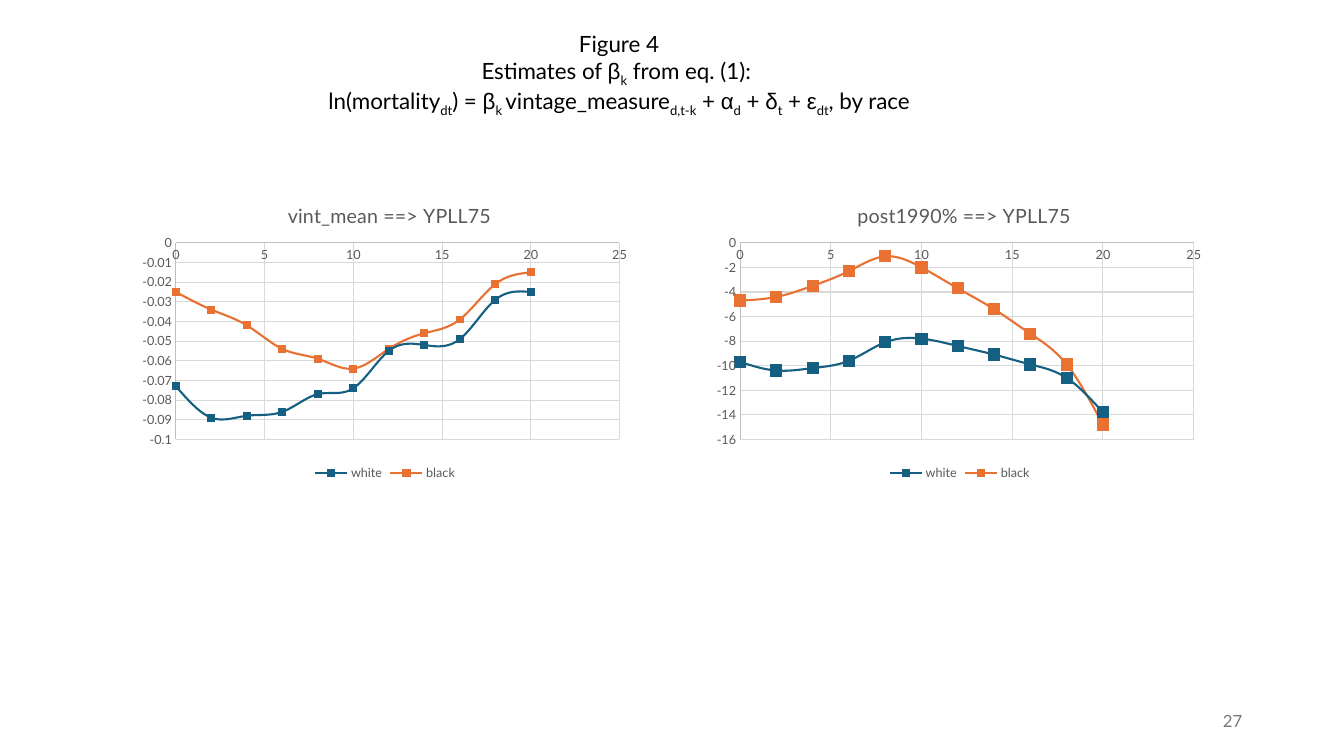
from itertools import groupby

from lxml import etree
from pptx import Presentation
from pptx.chart.data import XyChartData
from pptx.dml.color import RGBColor
from pptx.enum.chart import (XL_CHART_TYPE, XL_LEGEND_POSITION, XL_MARKER_STYLE,
                             XL_TICK_MARK)
from pptx.enum.text import MSO_ANCHOR, PP_ALIGN
from pptx.oxml.ns import qn
from pptx.util import Pt

PX = 9144  # 100 px to the inch
SCATTER = XL_CHART_TYPE.XY_SCATTER_SMOOTH
SQUARE = XL_MARKER_STYLE.SQUARE
NO_TICK = XL_TICK_MARK.NONE
LEGEND_BOTTOM = XL_LEGEND_POSITION.BOTTOM
CENTER, RIGHT = PP_ALIGN.CENTER, PP_ALIGN.RIGHT
MIDDLE, BOTTOM = MSO_ANCHOR.MIDDLE, MSO_ANCHOR.BOTTOM

GREEK = "αβδε"
YEARS = range(0, 21, 2)
SERIES_COLORS = {"white": "156082", "black": "E97132"}

# Every second piece between bars is a subscript.
HEADING = [
    ["Figure 4"],
    ["Estimates of β|k| from eq. (1): ",
     "ln(mortality|dt|) = β|k |vintage_measure|d,t-k| + α|d| + δ|t| + ε|dt|, by race"],
]

CHARTS = [
    {"title": "vint_mean ==> YPLL75", "left": 132, "marker": 5,
     "title_at": {"x": 0.3, "y": 0.05},
     "plot_at": {"x": 0.085, "y": 0.2, "w": 0.88, "h": 0.65},
     "low": -0.1, "step": 0.01,
     "values": {
         "white": [-0.073, -0.089, -0.088, -0.086, -0.077, -0.074,
                   -0.055, -0.052, -0.049, -0.029, -0.025],
         "black": [-0.025, -0.034, -0.042, -0.054, -0.059, -0.064,
                   -0.054, -0.046, -0.039, -0.021, -0.015]}},
    {"title": "post1990% ==> YPLL75", "left": 702, "marker": 8,
     "title_at": {"x": 0.29, "y": 0.05},
     "plot_at": {"x": 0.064, "y": 0.2, "w": 0.9, "h": 0.65},
     "low": -16, "step": 2,
     "values": {
         "white": [-9.7, -10.4, -10.2, -9.6, -8.1, -7.8, -8.4, -9.1, -9.9, -11, -13.8],
         "black": [-4.7, -4.4, -3.5, -2.3, -1.1, -2, -3.7, -5.4, -7.4, -9.9, -14.8]}},
]


def rgb(color):
    return RGBColor.from_string(color)


def px(*lengths):
    return [n * PX for n in lengths]


def assign(obj, **values):
    for name, value in values.items():
        setattr(obj, name, value)


def set_layout(el, fractions):
    """Place a chart part by fractions of the chart's size."""
    layout = el.find(qn("c:layout"))
    if layout is None:
        layout = etree.Element(qn("c:layout"))
        el.insert(0 if el.find(qn("c:tx")) is None else 1, layout)
    manual = etree.SubElement(layout, qn("c:manualLayout"))
    settings = {"xMode": "edge", "yMode": "edge", **fractions}
    if "w" in fractions:
        settings = {"layoutTarget": "inner", **settings}
    for tag, value in settings.items():
        etree.SubElement(manual, qn("c:" + tag)).set("val", str(value))


class Deck:
    """Holds the style and the current slide."""
    font = "Lato"
    black, gray, page_gray = "000000", "595959", "797979"
    axis_line, grid_line = "BFBFBF", "D9D9D9"

    def __init__(self, width, height):
        self.prs = Presentation()
        self.prs.slide_width, self.prs.slide_height = px(width, height)
        self.slide = self.prs.slides.add_slide(self.prs.slide_layouts[6])

    def style(self, font, size, color, name=None):
        assign(font, size=Pt(size), name=name or self.font, bold=False)
        font.color.rgb = rgb(color)

    def line(self, line, color, width):
        line.color.rgb = rgb(color)
        line.width = Pt(width)

    def formula(self, p, text, size):
        """Write text with subscripts between bars and Greek letters in Arial."""
        p.alignment = CENTER
        for i, piece in enumerate(text.split("|")):
            for greek, letters in groupby(piece, lambda c: c in GREEK):
                r = p.add_run()
                r.text = "".join(letters)
                self.style(r.font, size, self.black, "Arial" if greek else None)
                if i % 2:
                    r.font._element.set("baseline", "-25000")

    def table(self, rows, box, heights):
        table = self.slide.shapes.add_table(len(rows), 1, *px(*box)).table
        assign(table, first_row=False, horz_banding=False)
        for i, lines in enumerate(rows):
            table.rows[i].height = heights[i] * PX
            cell = table.cell(i, 0)
            cell.fill.background()
            assign(cell, vertical_anchor=BOTTOM, margin_left=0, margin_right=0,
                   margin_top=0, margin_bottom=0)
            tf = cell.text_frame
            for j, text in enumerate(lines):
                self.formula(tf.add_paragraph() if j else tf.paragraphs[0], text, 16)

    def axis(self, axis, low, high, step):
        assign(axis, minimum_scale=low, maximum_scale=high, major_unit=step,
               major_tick_mark=NO_TICK, minor_tick_mark=NO_TICK,
               has_major_gridlines=True, has_title=False)
        self.style(axis.tick_labels.font, 9, self.gray)
        self.line(axis.format.line, self.axis_line, 0.75)
        self.line(axis.major_gridlines.format.line, self.grid_line, 0.75)

    def scatter(self, spec_values):
        data = XyChartData()
        for name, values in spec_values["values"].items():
            series = data.add_series(name)
            for x, y in zip(YEARS, values):
                series.add_data_point(x, y)
        box = px(spec_values["left"], 181, 500, 300)
        chart = self.slide.shapes.add_chart(SCATTER, *box, data).chart
        self.style(chart.font, 10, self.black)

        chart.has_title = True
        p = chart.chart_title.text_frame.paragraphs[0]
        r = p.add_run()
        r.text = spec_values["title"]
        self.style(r.font, 14, self.gray)
        set_layout(chart.chart_title._element, spec_values["title_at"])
        set_layout(chart._chartSpace.chart.plotArea, spec_values["plot_at"])

        chart.has_legend = True
        assign(chart.legend, position=LEGEND_BOTTOM, include_in_layout=False)
        self.style(chart.legend.font, 9, self.gray)
        self.axis(chart.category_axis, 0, 25, 5)
        self.axis(chart.value_axis, spec_values["low"], 0, spec_values["step"])

        plot = chart.plots[0]
        plot.vary_by_categories = False
        for s in plot.series:
            color = SERIES_COLORS[s.name]
            self.line(s.format.line, color, 1.5)
            assign(s.marker, style=SQUARE, size=spec_values["marker"])
            s.marker.format.fill.solid()
            s.marker.format.fill.fore_color.rgb = rgb(color)
            self.line(s.marker.format.line, color, 0.75)
            s._element.find(qn("c:smooth")).set("val", "1")

    def page_number(self, text, box):
        tf = self.slide.shapes.add_textbox(*px(*box)).text_frame
        assign(tf, word_wrap=True, vertical_anchor=MIDDLE)
        p = tf.paragraphs[0]
        p.alignment = RIGHT
        r = p.add_run()
        r.text = text
        self.style(r.font, 12, self.page_gray)


def main():
    deck = Deck(1333, 750)
    deck.table(HEADING, (314, 30, 600, 80), (27, 53))
    for chart in CHARTS:
        deck.scatter(chart)
    deck.page_number("27", (942, 695, 300, 40))
    deck.prs.save("out.pptx")


if __name__ == "__main__":
    main()
